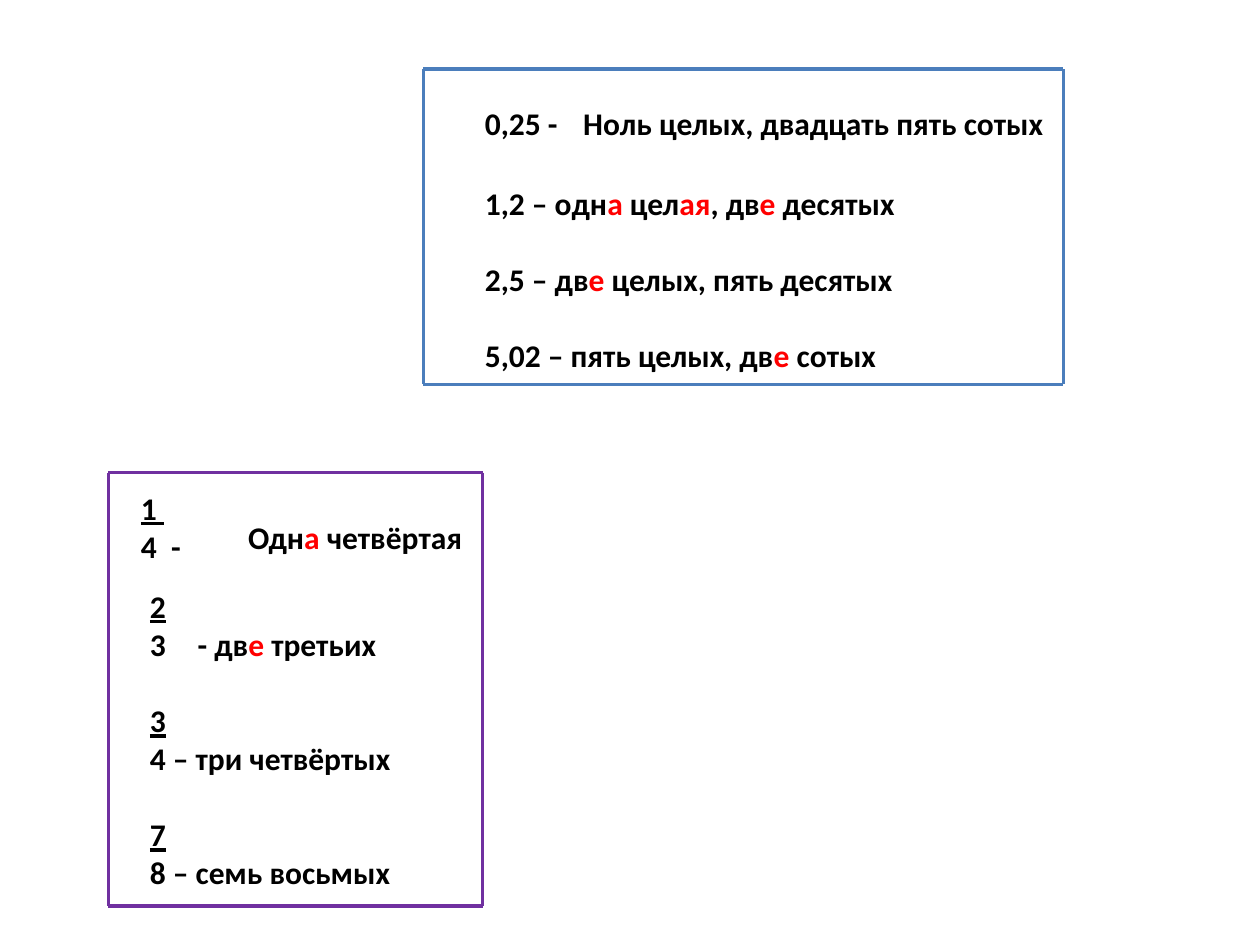
"""Build a slide on reading decimal and common fractions aloud in Russian."""
from lxml import etree
from pptx import Presentation
from pptx.dml.color import RGBColor
from pptx.enum.shapes import MSO_CONNECTOR
from pptx.enum.text import MSO_AUTO_SIZE
from pptx.oxml.ns import qn
from pptx.util import Inches, Pt

STRAIGHT = MSO_CONNECTOR.STRAIGHT
FIT_SHAPE = MSO_AUTO_SIZE.SHAPE_TO_FIT_TEXT
BLACK = RGBColor(0x00, 0x00, 0x00)
RED = RGBColor(0xFF, 0x00, 0x00)
BLUE = RGBColor(0x4B, 0x7E, 0xBC)
PURPLE = RGBColor(0x70, 0x30, 0xA0)
LINE_GAP = Pt(22)


def add_text(left, top, width, height, lines):
    """Write lines with red text between bars and underlined text after an underscore."""
    box = page.shapes.add_textbox(Inches(left), Inches(top), Inches(width), Inches(height))
    frame = box.text_frame
    frame.word_wrap = True
    frame.auto_size = FIT_SHAPE
    for index, line in enumerate(lines):
        para = frame.paragraphs[0] if index == 0 else frame.add_paragraph()
        for part, text in enumerate(line.lstrip("_").split("|")):
            span = para.add_run()
            span.text = text
            span.font.name = "Calibri"
            span.font.size = Pt(18)
            span.font.bold = True
            span.font.underline = line.startswith("_")
            span.font.color.rgb = RED if part % 2 else BLACK
    return frame.paragraphs


def set_hanging(para):
    """Give a paragraph a hanging indent."""
    properties = para._p.get_or_add_pPr()
    properties.set("marL", str(Inches(0.38)))
    properties.set("indent", str(-Inches(0.38)))
    return properties


deck = Presentation()
deck.slide_width = Inches(10)
deck.slide_height = Inches(7.5)
page = deck.slides.add_slide(deck.slide_layouts[6])

add_text(4.53, 0.78, 4.69, 0.4, ["Ноль целых, двадцать пять сотых"])
decimals = add_text(3.75, 1.41, 4.77, 1.62, [
    "1,2 – одн|а| цел|ая|, дв|е| десятых",
    "2,5 – дв|е| целых, пять десятых",
    "5,02 – пять целых, дв|е| сотых",
])
add_text(3.75, 0.78, 1.58, 0.4, ["0,25 -"])

add_text(1.02, 3.83, 6.41, 0.71, ["_1 ", "4  -"])
add_text(1.87, 4.06, 5.15, 0.4, ["Одн|а |четвёртая"])
fractions = add_text(1.09, 4.61, 6.41, 2.52, [
    "_2", "- дв|е| третьих",
    "_3", "4 – три четвёртых",
    "_7", "8 – семь восьмых",
])

for para in decimals + fractions[1:]:
    set_hanging(para)
for para in decimals[1:] + fractions[2::2]:
    para.space_before = LINE_GAP
number = etree.SubElement(fractions[1]._p.get_or_add_pPr(), qn("a:buAutoNum"))
number.set("type", "arabicPlain")
number.set("startAt", "3")

for left, top, right, bottom, color in [
    (3.36, 0.55, 8.44, 3.05, BLUE),
    (0.86, 3.75, 3.83, 7.19, PURPLE),
]:
    for x1, y1, x2, y2, weight in [
        (left, top, right, top, 2.25),
        (left, top, left, bottom, 2),
        (left, bottom, right, bottom, 2),
        (right, top, right, bottom, 2),
    ]:
        edge = page.shapes.add_connector(
            STRAIGHT, Inches(x1), Inches(y1), Inches(x2), Inches(y2))
        edge.line.color.rgb = color
        edge.line.width = Pt(weight)
        etree.SubElement(edge._element.spPr, qn("a:effectLst"))

deck.save("out.pptx")
